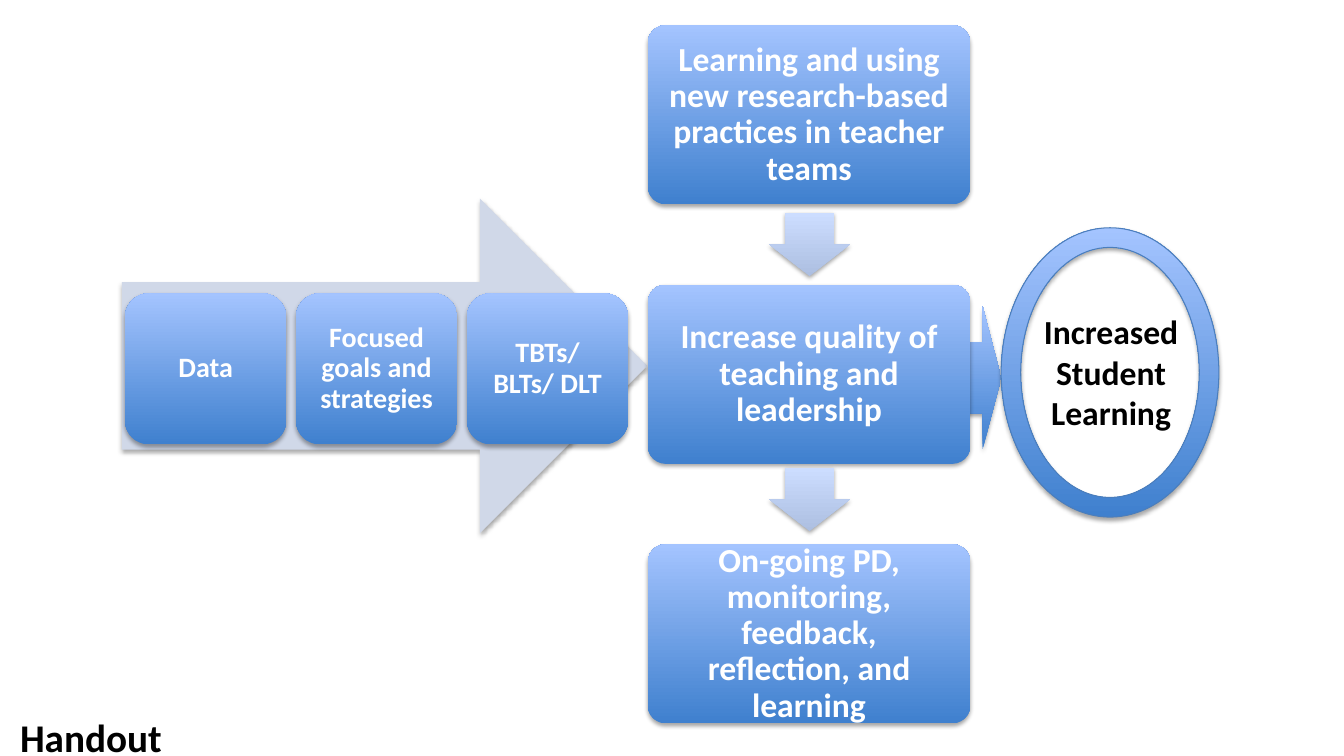
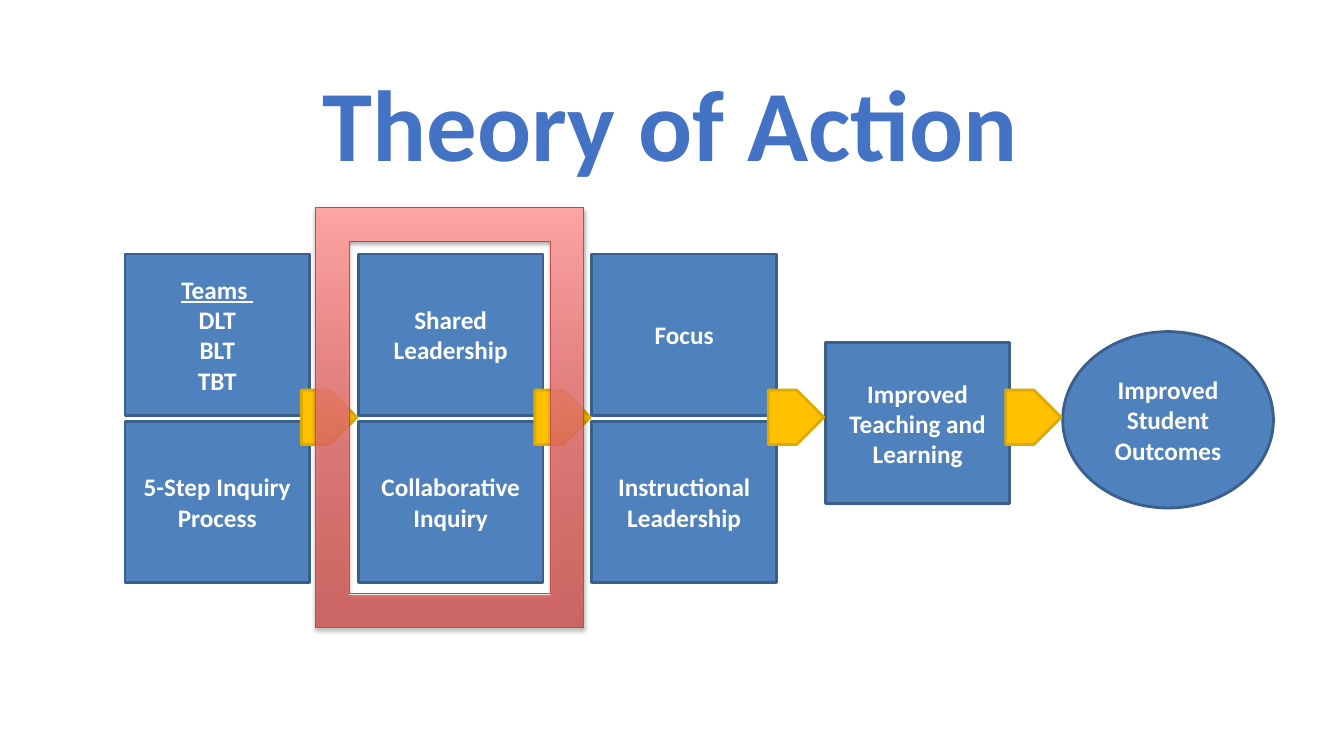
from dataclasses import dataclass

from lxml import etree
from pptx import Presentation
from pptx import util as u
from pptx.dml.color import RGBColor
from pptx.enum import shapes, text
from pptx.oxml import ns

WIDTH, HEIGHT = u.Inches(13.33), u.Inches(7.5)
FONT = "Calibri"
COLORS = {
    "black": "000000", "white": "FFFFFF", "title": "4472C4",
    "deep": "3F80CE", "light": "A4C4FF", "rim": "4B7EBC",
    "pale_deep": "ADBFE1", "pale_light": "CCDDFF", "backdrop": "D0D8E8",
    "box": "4F81BD", "box_line": "3A5F8C",
    "marker": "FFC000", "marker_line": "DEA900",
    "frame_deep": "D1403C", "frame_light": "FFA6A5", "frame_line": "BF4C48",
}
BLUE = ("deep", "light")
PALE = ("pale_deep", "pale_light")
RED = ("frame_deep", "frame_light")
KIND = shapes.MSO_SHAPE


@dataclass
class Grid:
    """Equal cells, measured in percent of the slide's width and height."""
    left: float
    top: float
    column_step: float
    row_step: float
    width: float
    height: float

    def cell(self, column=0, row=0):
        return (self.left + column * self.column_step,
                self.top + row * self.row_step, self.width, self.height)


def rgb(name):
    return RGBColor.from_string(COLORS[name])


def to_lengths(area):
    """Turn percentages (left, top, width, height) into slide lengths."""
    return [round(share / 100 * full)
            for share, full in zip(area, (WIDTH, HEIGHT, WIDTH, HEIGHT))]


def write(shape, lines, size, color, spacing=None, underlined=None,
          align=text.PP_ALIGN.CENTER):
    frame = shape.text_frame
    frame.word_wrap = True
    for index, line in enumerate(lines):
        paragraph = frame.add_paragraph() if index else frame.paragraphs[0]
        paragraph.alignment = align
        if spacing:
            paragraph.line_spacing = spacing
        run = paragraph.add_run()
        run.text = line
        run.font.name = FONT
        run.font.size = u.Pt(size)
        run.font.bold = True
        run.font.underline = index == underlined
        run.font.color.rgb = rgb(color)


def add_label(slide, area, line, size, color="black", align=text.PP_ALIGN.CENTER):
    box = slide.shapes.add_textbox(*to_lengths(area))
    write(box, [line], size, color, align=align)
    box.text_frame.auto_size = text.MSO_AUTO_SIZE.SHAPE_TO_FIT_TEXT


def add_shadow(shape):
    effects = shape._element.spPr.find(ns.qn("a:effectLst"))
    shadow = etree.SubElement(effects, ns.qn("a:outerShdw"), blurRad=str(u.Pt(3.1)),
                              dist=str(u.Pt(1.8)), dir="5400000", rotWithShape="0")
    color = etree.SubElement(shadow, ns.qn("a:srgbClr"), val=COLORS["black"])
    etree.SubElement(color, ns.qn("a:alpha"), val="35000")


def add_figure(slide, kind, area, fill, line=None, line_width=0.75,
               adjustments=(), shadow=False):
    """Add a preset shape; a pair of fill names gives a bottom-to-top gradient."""
    shape = slide.shapes.add_shape(kind, *to_lengths(area))
    shape.shadow.inherit = False
    for index, value in enumerate(adjustments):
        shape.adjustments[index] = value
    if isinstance(fill, tuple):
        shape.fill.gradient()
        shape.fill.gradient_angle = 90
        for stop, name in zip(shape.fill.gradient_stops, fill):
            stop.color.rgb = rgb(name)
    else:
        shape.fill.solid()
        shape.fill.fore_color.rgb = rgb(fill)
    if line:
        shape.line.color.rgb = rgb(line)
        shape.line.width = u.Pt(line_width)
    else:
        shape.line.fill.background()
    if shadow:
        add_shadow(shape)
    return shape


def add_card(slide, area, line, size, corner, inset):
    card = add_figure(slide, KIND.ROUNDED_RECTANGLE, area, BLUE,
                      adjustments=[corner], shadow=True)
    frame = card.text_frame
    frame.margin_left = frame.margin_right = u.Inches(inset)
    frame.margin_top = frame.margin_bottom = u.Inches(inset)
    frame.vertical_anchor = text.MSO_ANCHOR.MIDDLE
    write(card, [line], size, "white", spacing=0.9)


def add_box(slide, area, lines, kind=KIND.RECTANGLE, underlined=None):
    box = add_figure(slide, kind, area, "box", "box_line", 2)
    box.text_frame.vertical_anchor = text.MSO_ANCHOR.MIDDLE
    write(box, lines, 18, "white", underlined=underlined)


def add_marker(slide, target_left):
    """Add a yellow pointer that ends just before the next box."""
    add_figure(slide, KIND.RIGHT_ARROW, (target_left - 4.24, 51.6, 4.13, 7.2),
               "marker", "marker_line", 2, adjustments=[1, 0.5])


def fade_first_stop(shape, percent):
    color = shape._element.spPr.find(".//" + ns.qn("a:srgbClr"))
    etree.SubElement(color, ns.qn("a:alpha"), val=str(percent * 1000))


def build_handout(slide):
    stack = Grid(48.2, 3.33, 0, 34.33, 24, 23.7)
    down_arrows = Grid(57.24, 28.13, 0, 33.73, 6, 8.4)
    steps = Grid(9.3, 38.8, 12.72, 0, 12, 20)

    add_label(slide, (0.75, 93.73, 21.15, 7.6), "Handout", 28,
              align=text.PP_ALIGN.LEFT)
    add_figure(slide, KIND.RIGHT_ARROW, (71.72, 40.53, 2.78, 18.93), BLUE, shadow=True)
    add_figure(slide, KIND.RIGHT_ARROW, (9.08, 26.27, 39.08, 44.27), "backdrop",
               shadow=True)
    for column, line in enumerate(
            ["Data", "Focused goals and strategies", "TBTs/ BLTs/ DLT"]):
        add_card(slide, steps.cell(column), line, 20, 0.16, 0.12)
    for row, line in enumerate([
            "Learning and using new research-based practices in teacher teams",
            "Increase quality of teaching and leadership",
            "On-going PD, monitoring, feedback, reflection, and learning"]):
        add_card(slide, stack.cell(row=row), line, 24, 0.1, 0.15)
    for row in range(2):
        add_figure(slide, KIND.DOWN_ARROW, down_arrows.cell(row=row), PALE,
                   adjustments=[0.6, 0.5], shadow=True)
    add_figure(slide, KIND.DONUT, (74.49, 30.13, 16.2, 38.27), BLUE, "rim",
               adjustments=[0.09], shadow=True)
    add_label(slide, (76.37, 40.53, 12.6, 17.47), "Increased Student Learning", 24)


def build_theory(slide):
    grid = Grid(9.3, 33.6, 17.37, 22.13, 13.73, 21.33)
    outcomes_area = (79.07, 43.87, 15.68, 23.33)

    add_label(slide, (19.58, 7.33, 60.62, 17.47), "Theory of Action", 72, "title")
    add_box(slide, grid.cell(0, 0), ["Teams ", "DLT", "BLT", "TBT"], underlined=0)
    for column, row, line in [
            (0, 1, "5-Step Inquiry Process"),
            (1, 0, "Shared Leadership"), (1, 1, "Collaborative Inquiry"),
            (2, 0, "Focus"), (2, 1, "Instructional Leadership"),
            (3, 0.53, "Improved Teaching and Learning")]:
        add_box(slide, grid.cell(column, row), [line])
    add_box(slide, outcomes_area, ["Improved Student Outcomes"], KIND.OVAL)
    for column in range(1, 4):
        add_marker(slide, grid.cell(column)[0])
    add_marker(slide, outcomes_area[0])
    highlight = add_figure(slide, KIND.FRAME, (23.48, 27.47, 19.95, 55.47), RED,
                           "frame_line", shadow=True)
    fade_first_stop(highlight, 70)


def main():
    presentation = Presentation()
    presentation.slide_width, presentation.slide_height = WIDTH, HEIGHT
    blank = presentation.slide_layouts[6]
    for build in (build_handout, build_theory):
        build(presentation.slides.add_slide(blank))
    presentation.save("out.pptx")


if __name__ == "__main__":
    main()
